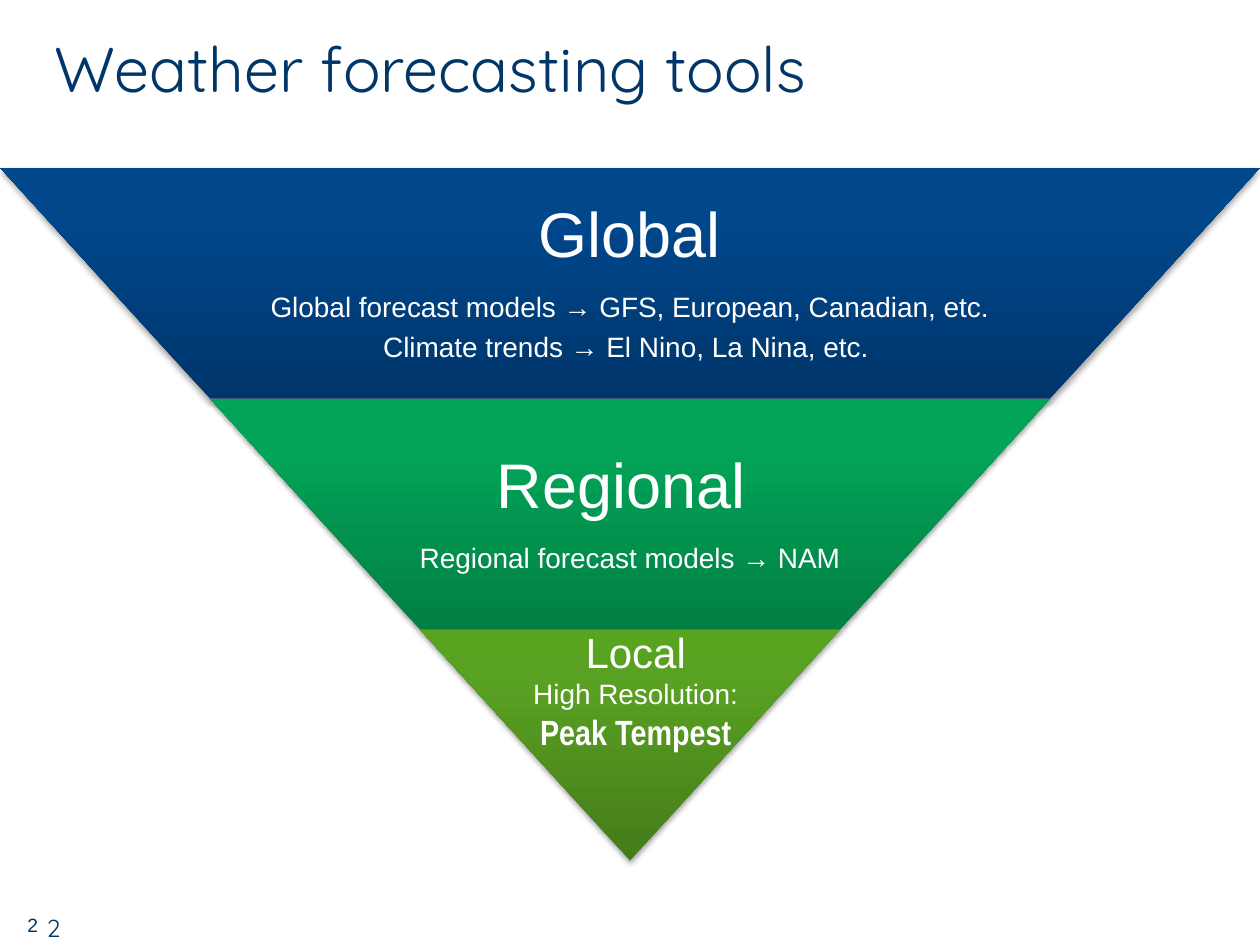
from dataclasses import dataclass

from lxml.etree import SubElement
from pptx import Presentation
from pptx.dml.color import RGBColor
from pptx.enum.shapes import MSO_SHAPE
from pptx.enum.text import MSO_ANCHOR, PP_ALIGN
from pptx.oxml import parse_xml
from pptx.oxml.ns import nsdecls, qn
from pptx.util import Inches, Pt


@dataclass(frozen=True)
class Theme:
    navy: str = "003768"
    white: str = "FFFFFF"
    body: str = "Arial"
    narrow: str = "Arial Narrow"
    display: str = "Quicksand"
    heading: int = 36
    subheading: int = 24
    strong: int = 20
    text: int = 16


T = Theme()

# Content: tiers from widest to narrowest, gradient colours from bottom to top
TITLE = "Weather forecasting tools"
TIERS = [
    {"colors": ("00366B", "00478C", "00478C"),
     "lines": [("Global", T.heading),
               ("Global forecast models → GFS, European, Canadian, etc.", T.text),
               ("Climate trends → El Nino, La Nina, etc. ", T.text)]},
    {"colors": ("027F44", "02A558", "00A859"),
     "lines": [("Regional ", T.heading),
               ("Regional forecast models → NAM", T.text)]},
    {"colors": ("457C1A", "59A122", "59A41F"), "lines": []},
]
LOCAL = [("Local", T.subheading), ("High Resolution:", T.text),
         ("Peak Tempest", T.strong, T.narrow, True)]
PAGE_NUMBERS = [((0.01, 7.2, 0.5, 0.29), 11, T.body),
                ((0.01, 7.2, 0.83, 0.34), 14, T.display)]

# Geometry in inches
SLIDE_W, SLIDE_H = 10, 7.5
TOP, TIER_H = 1.33, 11 / 6
SLOPE = SLIDE_W / 2 / len(TIERS)
TEXT_SHARE = 0.65


def style(p, size, font=T.body, bold=False, color=T.white):
    for r in p.runs:
        r.font.size, r.font.name, r.font.bold = Pt(size), font, bold
        r.font.color.rgb = RGBColor.from_string(color)


def add_text(slide, box, lines, color=T.white, inset=None, spaced=False):
    tf = slide.shapes.add_textbox(*map(Inches, box)).text_frame
    tf.word_wrap = True
    if inset is not None:
        tf.margin_left = tf.margin_right = Inches(inset)
        tf.margin_top = tf.margin_bottom = Inches(inset)
        tf.vertical_anchor = MSO_ANCHOR.MIDDLE
    tf.text = "\n".join(line[0] for line in lines)
    for p, (_, *look) in zip(tf.paragraphs, lines):
        p.alignment = PP_ALIGN.CENTER
        if spaced:
            p.line_spacing = 0.9
            after = SubElement(p._p.get_or_add_pPr(), qn("a:spcAft"))
            SubElement(after, qn("a:spcPct")).set("val", "35000")
        style(p, *look, color=color)


def add_tier(slide, i, colors, lines):
    x, y, w = i * SLOPE, TOP + i * TIER_H, SLIDE_W - 2 * i * SLOPE
    sp = slide.shapes.add_shape(MSO_SHAPE.TRAPEZOID, *map(Inches, (x, y, w, TIER_H)))
    sp.rotation = 180
    sp.adjustments[0] = SLOPE / min(w, TIER_H)
    sp.line.fill.background()
    stops = "".join(f'<a:gs pos="{pos}000"><a:srgbClr val="{c}"/></a:gs>'
                    for pos, c in zip((0, 80, 100), colors))
    sp_pr = sp._element.spPr
    sp_pr.find(qn("a:ln")).addprevious(parse_xml(
        f'<a:gradFill {nsdecls("a")} rotWithShape="0"><a:gsLst>{stops}</a:gsLst>'
        '<a:lin ang="16200000" scaled="0"/></a:gradFill>'))
    sp_pr.append(parse_xml(
        f'<a:effectLst {nsdecls("a")}><a:outerShdw blurRad="{Pt(3.1)}" dist="{Pt(1.8)}" '
        'dir="5400000" rotWithShape="0"><a:srgbClr val="000000"><a:alpha val="35000"/>'
        '</a:srgbClr></a:outerShdw></a:effectLst>'))
    if lines:
        text_w = w * TEXT_SHARE
        add_text(slide, ((SLIDE_W - text_w) / 2, y, text_w, TIER_H), lines,
                 inset=0.05, spaced=True)


def main():
    prs = Presentation()
    prs.slide_width, prs.slide_height = Inches(SLIDE_W), Inches(SLIDE_H)
    slide = prs.slides.add_slide(prs.slide_layouts[5])

    # Title
    title = slide.shapes.title
    title.left, title.top, title.width, title.height = map(Inches, (0.33, 0.16, 8.92, 0.75))
    tf = title.text_frame
    tf.text = TITLE
    tf.vertical_anchor = MSO_ANCHOR.MIDDLE
    tf.paragraphs[0].alignment = PP_ALIGN.LEFT
    style(tf.paragraphs[0], T.heading, T.display, color=T.navy)

    # Page numbers
    for box, size, font in PAGE_NUMBERS:
        add_text(slide, box, [("2", size, font)], color=T.navy)

    # Inverted pyramid
    for i, tier in enumerate(TIERS):
        add_tier(slide, i, **tier)
    add_text(slide, (3.67, 4.92, 2.75, 1.11), LOCAL)

    prs.save("out.pptx")


if __name__ == "__main__":
    main()
